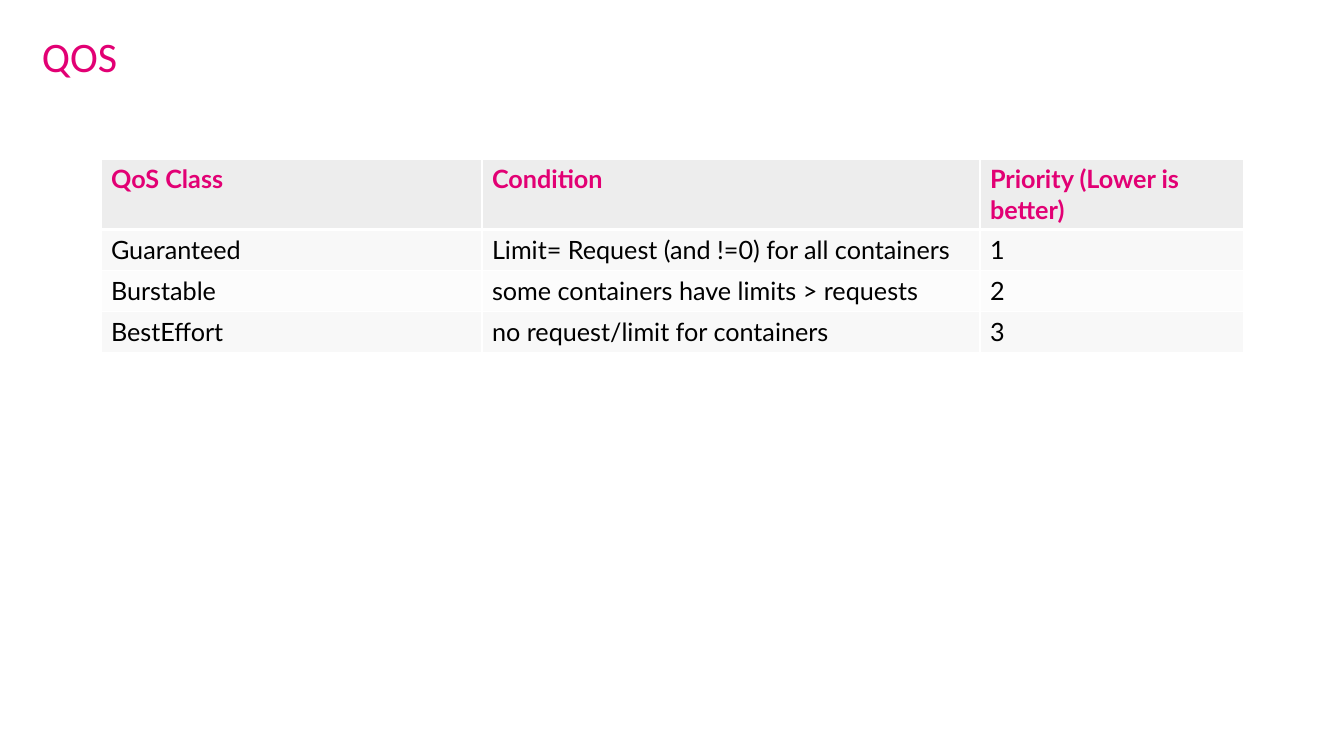
from lxml import etree
from pptx import Presentation
from pptx.dml.color import RGBColor
from pptx.enum.text import MSO_ANCHOR, PP_ALIGN
from pptx.oxml.ns import qn
from pptx.util import Emu, Pt

TITLE = "QOS"
ROWS = [
    ("QoS Class", "Condition", "Priority (Lower is better)"),
    ("Guaranteed", "Limit= Request (and !=0) for all containers", "1"),
    ("Burstable", "some containers have limits > requests", "2"),
    ("BestEffort", "no request/limit for containers", "3"),
]
COLORS = {
    "accent": "E20074",
    "text": "000000",
    "header": "EDEDED",
    "odd": "F8F8F8",
    "even": "FCFCFC",
    "border": "FFFFFF",
}
SLIDE_SIZE = (1344, 756)
TITLE_BOX = (42, 36, 936, 45)
TABLE_ORIGIN = (101, 159)
COLUMN_WIDTHS = (381, 498, 264)
HEADER_HEIGHT, ROW_HEIGHT = 69, 41
EMU_PER_PX = 12192000 / SLIDE_SIZE[0]


def px(length):
    return Emu(round(length * EMU_PER_PX))


def write(frame, text, *, size, font, color, bold=False, spacing=1.0):
    frame.text = text
    paragraph = frame.paragraphs[0]
    paragraph.alignment = PP_ALIGN.LEFT
    paragraph.line_spacing = spacing
    run_font = paragraph.runs[0].font
    run_font.size = Pt(size)
    run_font.name = font
    run_font.bold = bold
    run_font.color.rgb = RGBColor.from_string(COLORS[color])


def add_borders(cell, top, bottom):
    properties = cell._tc.get_or_add_tcPr()
    for side, width in (("L", 1), ("R", 1), ("T", top), ("B", bottom)):
        line = etree.SubElement(properties, qn(f"a:ln{side}"), w=str(Pt(width)))
        fill = etree.SubElement(line, qn("a:solidFill"))
        etree.SubElement(fill, qn("a:srgbClr"), val=COLORS["border"])


def add_title(slide):
    title = slide.shapes.title
    title.left, title.top, title.width, title.height = map(px, TITLE_BOX)
    frame = title.text_frame
    frame.margin_left = frame.margin_right = frame.margin_top = frame.margin_bottom = 0
    frame.vertical_anchor = MSO_ANCHOR.MIDDLE
    frame.word_wrap = True
    write(frame, TITLE, size=30, font="Calibri", color="accent", spacing=0.9)


def add_qos_table(slide):
    heights = [HEADER_HEIGHT] + [ROW_HEIGHT] * (len(ROWS) - 1)
    box = (*TABLE_ORIGIN, sum(COLUMN_WIDTHS), sum(heights))
    table = slide.shapes.add_table(len(ROWS), len(COLUMN_WIDTHS), *map(px, box)).table
    for column, width in zip(table.columns, COLUMN_WIDTHS):
        column.width = px(width)
    for index, (row, height, texts) in enumerate(zip(table.rows, heights, ROWS)):
        row.height = px(height)
        is_header = index == 0
        fill = "header" if is_header else "odd" if index % 2 else "even"
        for cell, text in zip(row.cells, texts):
            add_borders(cell, top=3 if index == 1 else 1, bottom=3 if is_header else 1)
            cell.fill.solid()
            cell.fill.fore_color.rgb = RGBColor.from_string(COLORS[fill])
            write(cell.text_frame, text, size=18, font="Lato",
                  color="accent" if is_header else "text", bold=is_header)


def main():
    presentation = Presentation()
    presentation.slide_width, presentation.slide_height = map(px, SLIDE_SIZE)
    slide = presentation.slides.add_slide(presentation.slide_layouts[5])
    add_title(slide)
    add_qos_table(slide)
    presentation.save("out.pptx")


if __name__ == "__main__":
    main()
